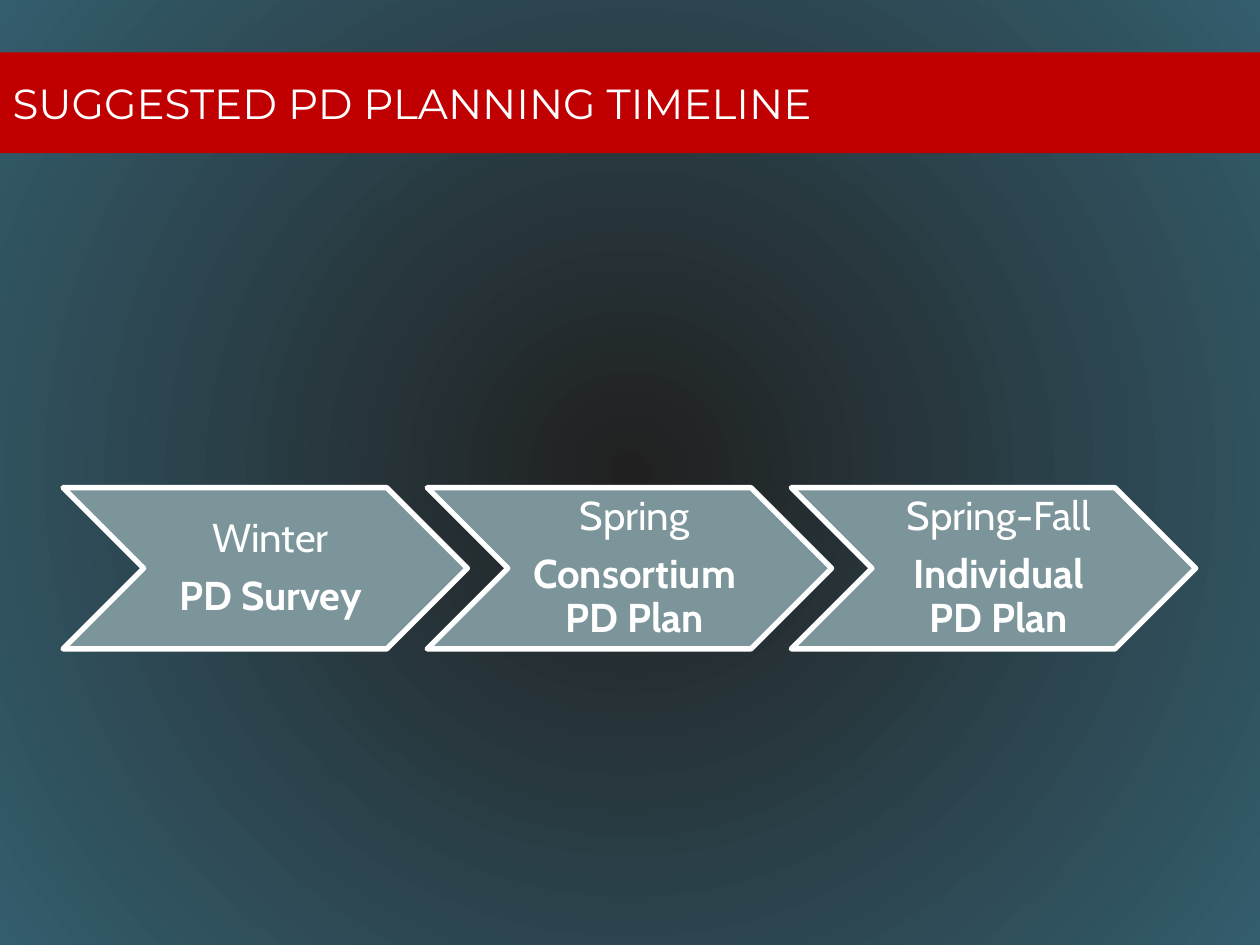
from lxml import etree
from pptx import Presentation
from pptx.dml.color import RGBColor
from pptx.enum.shapes import MSO_SHAPE
from pptx.enum.text import MSO_ANCHOR, MSO_AUTO_SIZE, PP_ALIGN
from pptx.oxml.ns import qn
from pptx.util import Pt

CHEVRON = MSO_SHAPE.CHEVRON
MIDDLE = MSO_ANCHOR.MIDDLE
NO_AUTOFIT = MSO_AUTO_SIZE.NONE
LEFT, CENTER = PP_ALIGN.LEFT, PP_ALIGN.CENTER
TITLE_ONLY = 5

COLORS = {
    "center": "202020",
    "edge": "335D6D",
    "banner": "C00000",
    "step": "7C959A",
    "white": "FFFFFF",
}

STEPS = [
    ("Winter", "PD Survey"),
    ("Spring", "Consortium PD Plan"),
    ("Spring-Fall", "Individual PD Plan"),
]
STEP_LEFT, STEP_TOP, STEP_PITCH = 36, 278.64, 208.08
STEP_WIDTH, STEP_HEIGHT = 231.12, 92.16
LABEL_INDENT, LABEL_WIDTH = 46.8, 138.96


class TimelineSlide:
    title_font = "Montserrat"
    body_font = "Cabin"

    def __init__(self, prs):
        self.slide = prs.slides.add_slide(prs.slide_layouts[TITLE_ONLY])

    def color(self, name):
        return RGBColor.from_string(COLORS[name])

    def style(self, paragraph, font_name, size, bold=False):
        for run in paragraph.runs:
            run.font.name = font_name
            run.font.size = Pt(size)
            run.font.bold = bold
            run.font.color.rgb = self.color("white")

    def background(self):
        fill = self.slide.background.fill
        fill.gradient()
        for stop, position, name in zip(fill.gradient_stops, (0, 1), ("center", "edge")):
            stop.position = position
            stop.color.rgb = self.color(name)
        # Turn the linear gradient into a circular one around the centre
        gradient = self.slide.background._cSld.find(".//" + qn("a:gradFill"))
        gradient.remove(gradient.find(qn("a:lin")))
        circle = etree.SubElement(gradient, qn("a:path"), path="circle")
        etree.SubElement(circle, qn("a:fillToRect"),
                         dict.fromkeys("ltrb", "50000"))

    def title(self, text, left, top, width, height):
        banner = self.slide.shapes.title
        banner.left, banner.top = Pt(left), Pt(top)
        banner.width, banner.height = Pt(width), Pt(height)
        banner.fill.solid()
        banner.fill.fore_color.rgb = self.color("banner")
        frame = banner.text_frame
        frame.text = text
        frame.auto_size = NO_AUTOFIT
        frame.vertical_anchor = MIDDLE
        frame.paragraphs[0].alignment = LEFT
        self.style(frame.paragraphs[0], self.title_font, 24)

    def chevron(self, group, left, top, width, height):
        arrow = group.shapes.add_shape(CHEVRON, Pt(left), Pt(top), Pt(width), Pt(height))
        arrow.shadow.inherit = False
        arrow.fill.solid()
        arrow.fill.fore_color.rgb = self.color("step")
        arrow.line.color.rgb = self.color("white")
        arrow.line.width = Pt(3.03)

    def label(self, group, lines, left, top, width, height):
        box = group.shapes.add_textbox(Pt(left), Pt(top), Pt(width), Pt(height))
        frame = box.text_frame
        frame.text = "\n".join(lines)
        frame.word_wrap = True
        frame.auto_size = NO_AUTOFIT
        frame.vertical_anchor = MIDDLE
        frame.margin_left = Pt(7.2)
        frame.margin_top = frame.margin_right = frame.margin_bottom = Pt(2.3)
        for number, paragraph in enumerate(frame.paragraphs):
            paragraph.alignment = CENTER
            paragraph.line_spacing = 0.9
            paragraph.space_after = Pt(8.5)
            self.style(paragraph, self.body_font, 23, bold=number > 0)


def main():
    prs = Presentation()
    prs.slide_width, prs.slide_height = Pt(720), Pt(540)
    timeline = TimelineSlide(prs)

    # Background and title banner
    timeline.background()
    timeline.title("SUGGESTED PD PLANNING TIMELINE", 0, 30, 720, 57.6)

    # Row of timeline steps
    group = timeline.slide.shapes.add_group_shape()
    for number, lines in enumerate(STEPS):
        left = STEP_LEFT + number * STEP_PITCH
        timeline.chevron(group, left, STEP_TOP, STEP_WIDTH, STEP_HEIGHT)
        timeline.label(group, lines, left + LABEL_INDENT, STEP_TOP,
                       LABEL_WIDTH, STEP_HEIGHT)

    prs.save("out.pptx")


if __name__ == "__main__":
    main()
